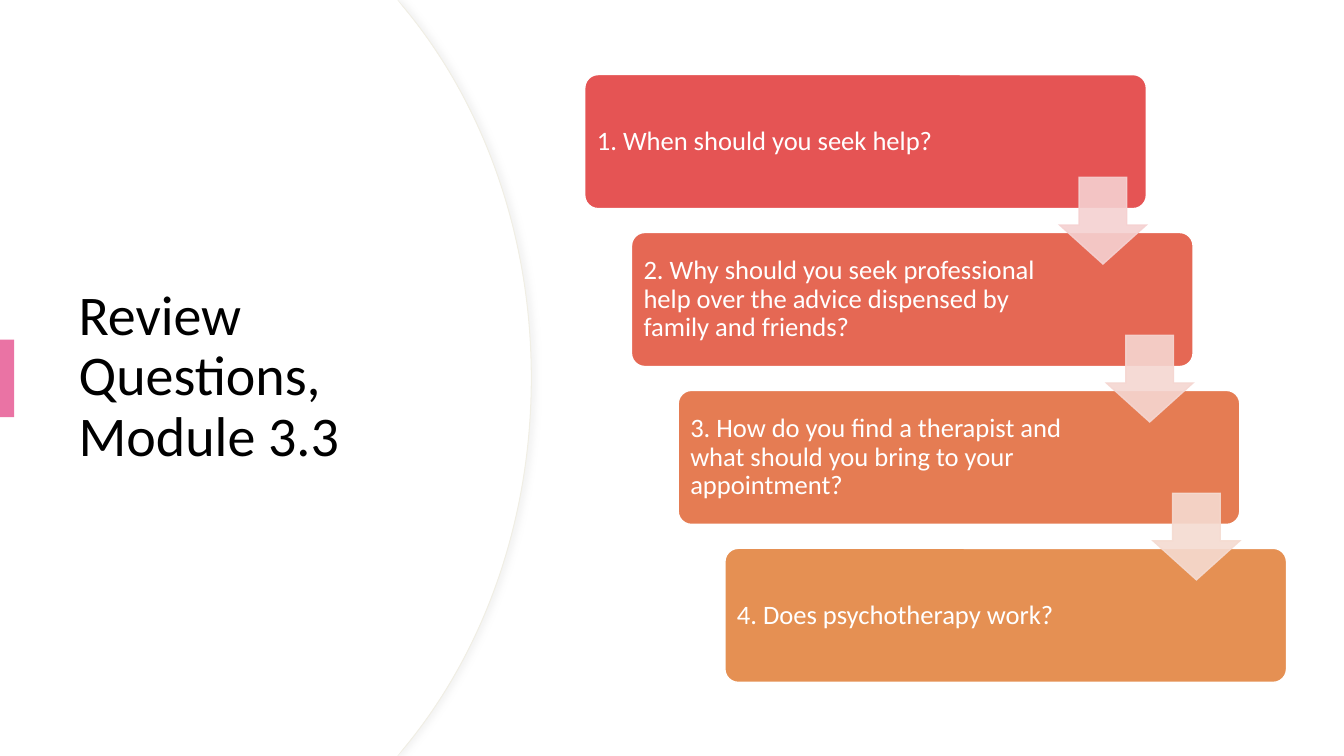
from lxml import etree
from pptx import Presentation
from pptx.dml.color import RGBColor
from pptx.enum.shapes import MSO_SHAPE
from pptx.enum.text import MSO_ANCHOR, PP_ALIGN
from pptx.oxml.ns import qn
from pptx.util import Inches, Pt

ROUNDED, ARROW, RECT = MSO_SHAPE.ROUNDED_RECTANGLE, MSO_SHAPE.DOWN_ARROW, MSO_SHAPE.RECTANGLE
MIDDLE, LEFT = MSO_ANCHOR.MIDDLE, PP_ALIGN.LEFT

TITLE = "Review Questions, Module 3.3"
# question, text width, card colour, colour of the arrow leading to the next card
QUESTIONS = [
    ("1. When should you seek help?", 4.02, "E55454", "F5D1D1"),
    ("2. Why should you seek professional help over the advice dispensed by family and friends?",
     4.16, "E56854", "F5D6D1"),
    ("3. How do you find a therapist and what should you bring to your appointment?",
     4.17, "E57C53", "F5DBD1"),
    ("4. Does psychotherapy work?", 4.16, "E59053", None),
]
COLORS = {"white": "FFFFFF", "black": "000000", "edge": "F0EEE4",
          "shadow": "D9D9D9", "accent": "EA73A4"}
FONT = "Calibri"

SLIDE_W, SLIDE_H = 13.33, 7.5
CARD_X, CARD_Y, CARD_W, CARD_H = 5.8, 0.74, 5.57, 1.33
LAST_X, LAST_Y = 7.19, 5.44
ARROW_X, ARROW_Y, ARROW_SIZE = 10.51, 1.76, 0.86
TEXT_INSET = 0.04

step_x = (LAST_X - CARD_X) / (len(QUESTIONS) - 1)
step_y = (LAST_Y - CARD_Y) / (len(QUESTIONS) - 1)


def set_text(shape, text, size, color, margin_x, margin_y):
    tf = shape.text_frame
    tf.word_wrap = True
    tf.vertical_anchor = MIDDLE
    tf.margin_left = tf.margin_right = Inches(margin_x)
    tf.margin_top = tf.margin_bottom = Inches(margin_y)
    p = tf.paragraphs[0]
    p.alignment = LEFT
    p.line_spacing = 0.9
    r = p.add_run()
    r.text = text
    r.font.name, r.font.size = FONT, Pt(size)
    r.font.color.rgb = RGBColor.from_string(color)


def paint(sp, fill, line=None, width=1, alpha=None):
    sp.shadow.inherit = False
    sp.fill.solid()
    sp.fill.fore_color.rgb = RGBColor.from_string(fill)
    if line:
        sp.line.width = Pt(width)
        sp.line.color.rgb = RGBColor.from_string(line)
        etree.SubElement(sp.element.spPr.find(qn("a:ln")), qn("a:miter"), lim="800000")
    else:
        sp.line.fill.background()
    if alpha:
        for clr in sp.element.spPr.iter(qn("a:srgbClr")):
            etree.SubElement(clr, qn("a:alpha"), val=str(alpha * 1000))


def add_box(kind, x, y, w, h, adjustments=(), **look):
    sp = slide.shapes.add_shape(kind, Inches(x), Inches(y), Inches(w), Inches(h))
    for i, value in enumerate(adjustments):
        sp.adjustments[i] = value
    paint(sp, **look)
    return sp


def add_shadow(sp):
    effects = sp.element.spPr.find(qn("a:effectLst"))
    shadow = etree.SubElement(effects, qn("a:outerShdw"), blurRad=str(Pt(4)),
                              dist=str(Pt(3)), dir="0", algn="l", rotWithShape="0")
    clr = etree.SubElement(shadow, qn("a:srgbClr"), val=COLORS["shadow"])
    etree.SubElement(clr, qn("a:alpha"), val="30000")


def curve_through(lines):
    """Turn three successive line segments into one cubic curve."""
    curve = etree.Element(qn("a:cubicBezTo"))
    lines[0].addprevious(curve)
    for line in lines:
        curve.append(line[0])
        line.getparent().remove(line)


def add_panel(right, **look):
    """Left panel whose right side bulges out to the given x."""
    upper = [(3.94, 0), (right - 1.26, 0.08), (right - 0.48, 1.02), (right, 2.32)]
    lower = [(x, SLIDE_H - y) for x, y in reversed(upper)]
    points = [*upper, (right, SLIDE_H / 2), *lower, (0, SLIDE_H)]
    builder = slide.shapes.build_freeform(0, 0)
    builder.add_line_segments([(Inches(x), Inches(y)) for x, y in points], close=True)
    sp = builder.convert_to_shape()
    lines = list(sp.element.spPr.iter(qn("a:lnTo")))
    curve_through(lines[2:5])
    curve_through(lines[5:8])
    paint(sp, **look)
    return sp


prs = Presentation()
prs.slide_width, prs.slide_height = Inches(SLIDE_W), Inches(SLIDE_H)
slide = prs.slides.add_slide(prs.slide_layouts[5])

add_box(RECT, 0, 0, SLIDE_W, SLIDE_H, fill=COLORS["white"])
add_shadow(add_panel(5.27, fill=COLORS["white"], line=COLORS["edge"], width=0.75))
add_panel(5.26, fill=COLORS["white"])

title = slide.shapes.title
title.left, title.top, title.width, title.height = map(Inches, (0.68, 1.27, 3.94, 4.95))
set_text(title, TITLE, 40, COLORS["black"], 0.1, 0.05)
title.element.getparent().append(title.element)  # bring in front of the panel

add_box(RECT, 0, 3.37, 0.14, 0.77, fill=COLORS["accent"])

for i, (question, text_w, color, _) in enumerate(QUESTIONS):
    x, y = CARD_X + i * step_x, CARD_Y + i * step_y
    add_box(ROUNDED, x, y, CARD_W, CARD_H, [0.1], fill=color, line=COLORS["white"])
    label = slide.shapes.add_textbox(Inches(x + TEXT_INSET), Inches(y + TEXT_INSET),
                                     Inches(text_w), Inches(CARD_H - 2 * TEXT_INSET))
    set_text(label, question, 19, COLORS["white"], 0.08, 0.08)

for i, (_, _, _, color) in enumerate(QUESTIONS[:-1]):
    add_box(ARROW, ARROW_X + i * step_x, ARROW_Y + i * step_y, ARROW_SIZE, ARROW_SIZE,
            [0.55, 0.45], fill=color, line=color, alpha=90)

prs.save("out.pptx")
